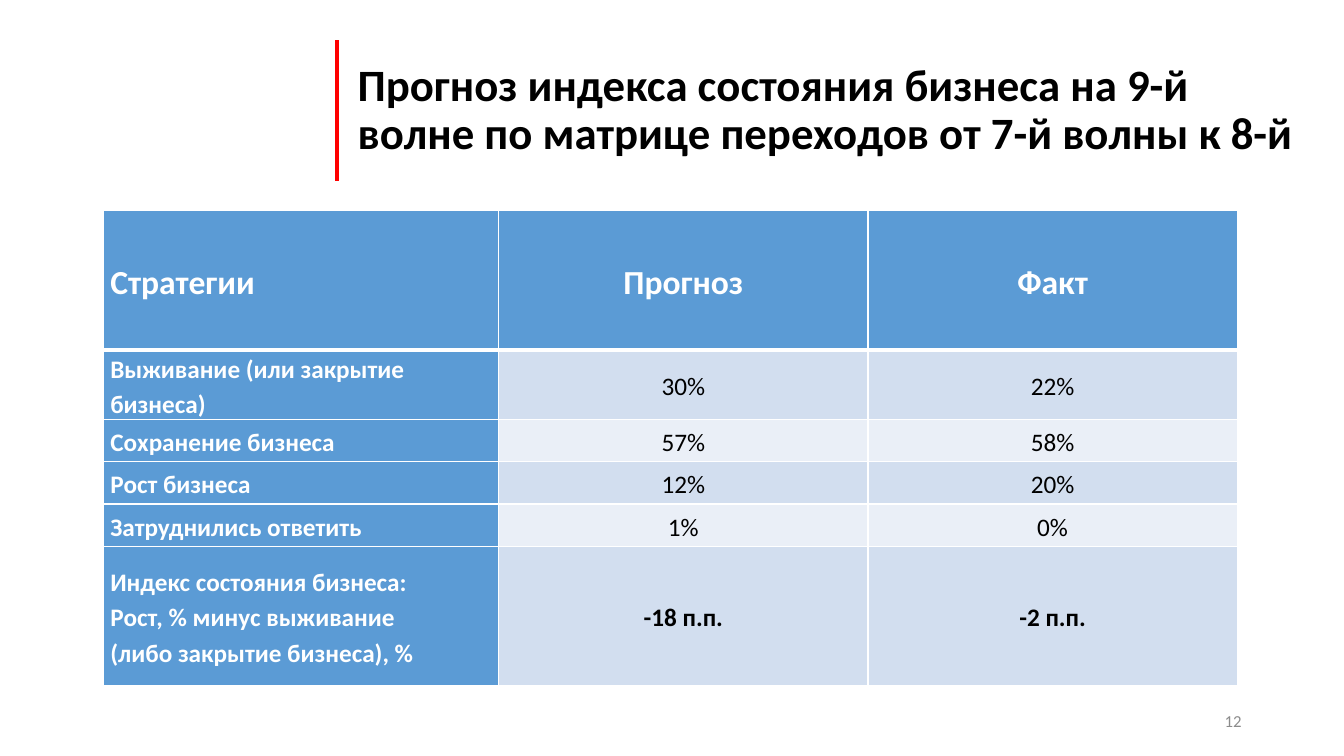
from lxml import etree
from pptx import Presentation
from pptx.dml.color import RGBColor
from pptx.enum.shapes import MSO_CONNECTOR
from pptx.enum.text import MSO_ANCHOR, PP_ALIGN
from pptx.oxml.ns import qn
from pptx.util import Pt

LEFT, CENTER, RIGHT = PP_ALIGN.LEFT, PP_ALIGN.CENTER, PP_ALIGN.RIGHT
MIDDLE = MSO_ANCHOR.MIDDLE
STRAIGHT = MSO_CONNECTOR.STRAIGHT

FONT = "Calibri"
WHITE, BLACK, GRAY, RED = "FFFFFF", "000000", "8C8C8C", "FF0000"
BLUE = "5B9BD5"
BANDS = ("D2DEEF", "EAEFF7")

TITLE = ("Прогноз индекса состояния бизнеса на 9-й волне "
         "по матрице переходов от 7-й волны к 8-й")
STRATEGIES = [
    ("Стратегии", "Прогноз", "Факт"),
    ("Выживание (или закрытие бизнеса)", "30%", "22%"),
    ("Сохранение бизнеса", "57%", "58%"),
    ("Рост бизнеса", "12%", "20%"),
    ("Затруднились ответить", "1%", "0%"),
    ("Индекс состояния бизнеса: \nРост, % минус выживание \n"
     "(либо закрытие бизнеса), %", "-18 п.п.", "-2 п.п."),
]
COLUMN_WIDTHS = (282.4, 263.8, 263.8)
TALL_ROW, SHORT_ROW = 99.4, 30.2


def color(value):
    return RGBColor.from_string(value)


def write(paragraph, text, size, ink, bold=False, align=LEFT, spacing=1.0):
    paragraph.alignment = align
    paragraph.line_spacing = spacing
    for index, line in enumerate(text.split("\n")):
        if index:
            paragraph.add_line_break()
        run = paragraph.add_run()
        run.text = line
        run.font.name = FONT
        run.font.size = Pt(size)
        run.font.bold = bold
        run.font.color.rgb = color(ink)


def add_label(slide, left, top, width, height, text, size, ink, **style):
    box = slide.shapes.add_textbox(Pt(left), Pt(top), Pt(width), Pt(height))
    frame = box.text_frame
    frame.word_wrap = True
    frame.vertical_anchor = MIDDLE
    write(frame.paragraphs[0], text, size, ink, **style)


def add_rule(slide, x, top, bottom):
    rule = slide.shapes.add_connector(STRAIGHT, Pt(x), Pt(top), Pt(x), Pt(bottom))
    rule.line.color.rgb = color(RED)
    rule.line.width = Pt(3)
    etree.SubElement(rule._element.spPr, qn("a:effectLst"))


def set_borders(cell, top, bottom):
    properties = cell._tc.get_or_add_tcPr()
    for side, width in (("L", 1), ("R", 1), ("T", top), ("B", bottom)):
        border = etree.SubElement(properties, qn("a:ln" + side), w=str(Pt(width)))
        fill = etree.SubElement(border, qn("a:solidFill"))
        etree.SubElement(fill, qn("a:srgbClr"), val=WHITE)


def style_cell(cell, row, column, text):
    header, label = row == 0, column == 0
    index_row = row == len(STRATEGIES) - 1
    on_blue = header or label

    cell.margin_left = cell.margin_right = Pt(5)
    cell.margin_top = cell.margin_bottom = Pt(0)
    cell.vertical_anchor = MIDDLE
    # Borders precede the fill; a thick line separates the header
    set_borders(cell, 3 if row == 1 else 1, 3 if header else 1)
    cell.fill.solid()
    cell.fill.fore_color.rgb = color(BLUE if on_blue else BANDS[(row - 1) % 2])
    write(cell.text_frame.paragraphs[0], text, 24 if header else 18,
          WHITE if on_blue else BLACK, bold=on_blue or index_row,
          align=LEFT if label else CENTER, spacing=1.15)


def add_strategy_table(slide, left, top):
    short_rows = len(STRATEGIES) - 2
    heights = [TALL_ROW] + [SHORT_ROW] * short_rows + [TALL_ROW]
    table = slide.shapes.add_table(
        len(heights), len(COLUMN_WIDTHS), Pt(left), Pt(top),
        Pt(sum(COLUMN_WIDTHS)), Pt(sum(heights))).table
    for column, width in zip(table.columns, COLUMN_WIDTHS):
        column.width = Pt(width)
    for row, height in zip(table.rows, heights):
        row.height = Pt(height)
    for row, texts in enumerate(STRATEGIES):
        for column, text in enumerate(texts):
            style_cell(table.cell(row, column), row, column, text)


def main():
    presentation = Presentation()
    presentation.slide_width, presentation.slide_height = Pt(960), Pt(540)
    slide = presentation.slides.add_slide(presentation.slide_layouts[6])

    # Heading with its red rule
    add_rule(slide, 240.8, 28.8, 129.6)
    add_label(slide, 248.4, 28.8, 683.5, 100.8, TITLE, 32, BLACK,
              bold=True, spacing=0.9)

    # Forecast against fact
    add_strategy_table(slide, 73.8, 150.6)

    # Slide number
    add_label(slide, 678, 500.5, 216, 28.8, "12", 12, GRAY, align=RIGHT)

    presentation.save("out.pptx")


if __name__ == "__main__":
    main()
